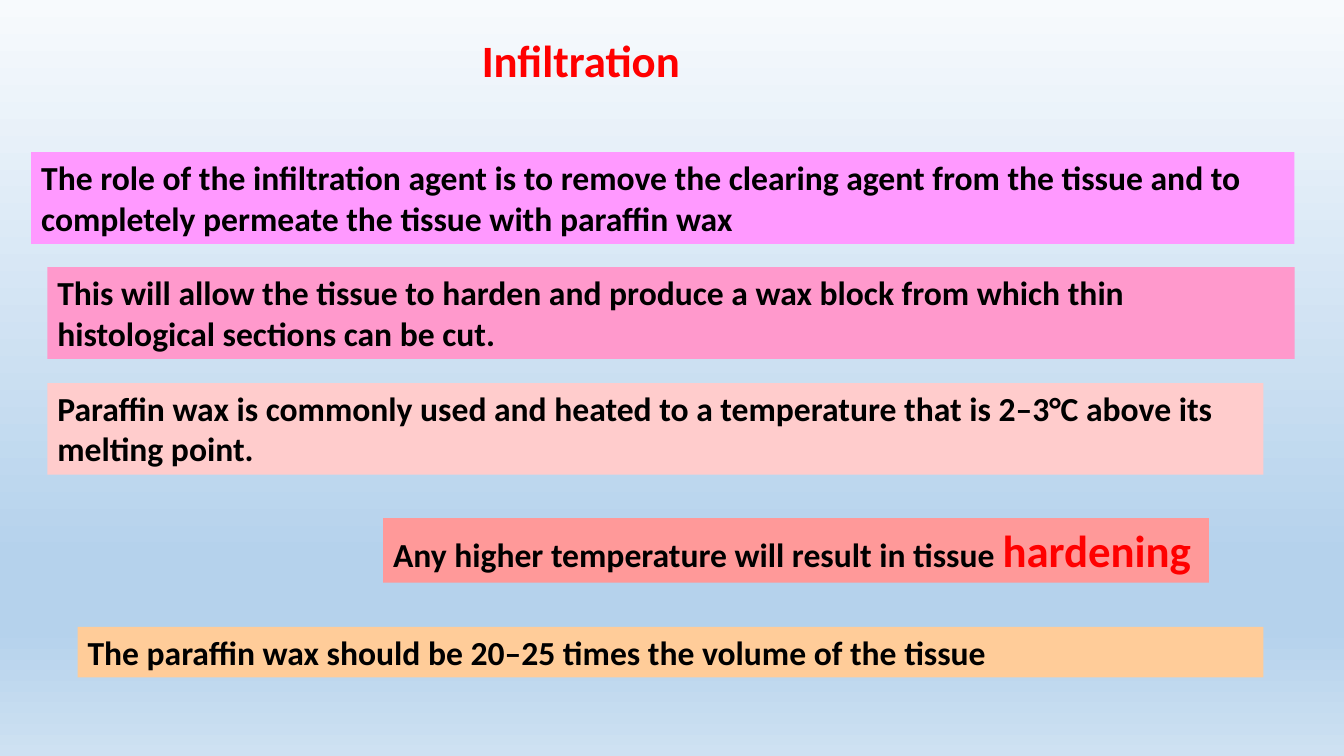
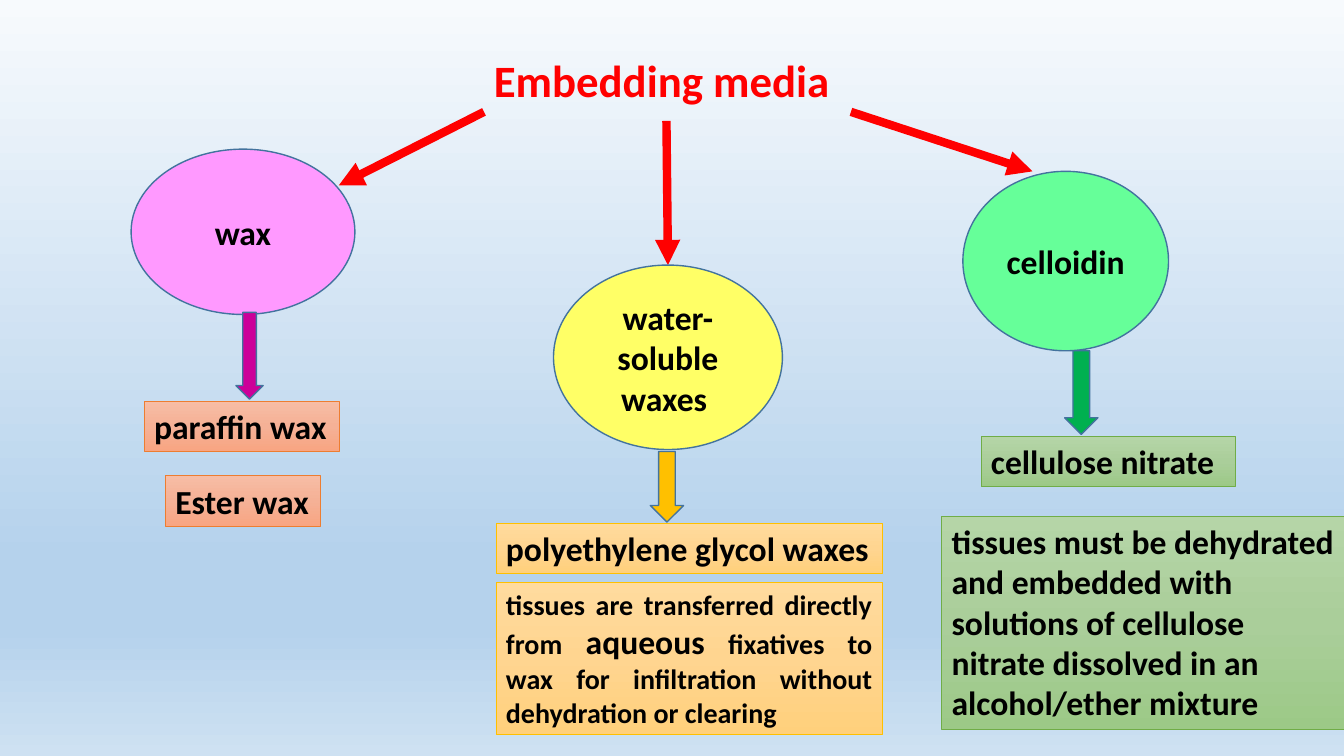
"""Build two slides on wax infiltration and embedding media."""
from lxml import etree
from copy import deepcopy
from pptx import Presentation
from pptx.dml.color import RGBColor
from pptx.enum.shapes import MSO_CONNECTOR, MSO_SHAPE
from pptx.enum.text import MSO_ANCHOR, MSO_AUTO_SIZE, PP_ALIGN
from pptx.oxml.ns import qn
from pptx.util import Inches, Pt

OVAL, DOWN_ARROW = MSO_SHAPE.OVAL, MSO_SHAPE.DOWN_ARROW
STRAIGHT = MSO_CONNECTOR.STRAIGHT
MIDDLE = MSO_ANCHOR.MIDDLE
FIT = MSO_AUTO_SIZE.SHAPE_TO_FIT_TEXT
LEFT, CENTER, JUSTIFY = PP_ALIGN.LEFT, PP_ALIGN.CENTER, PP_ALIGN.JUSTIFY

FONT, BLACK, RED, OUTLINE = "Calibri", "000000", "FF0000", "43739E"
BODY, SMALL, LARGE = 24, 20, 32
BACKGROUND = [(0, "F7FAFD"), (0.74, "B5D2EC"), (0.83, "B5D2EC"), (1, "CEE1F2")]
ORANGE = ([(0, "F7BDA5"), (0.5, "F5B196"), (1, "F8A582")], "ED7D31")
GOLD = ([(0, "FFDB9E"), (0.5, "FFD590"), (1, "FFD07C")], "FFC000")
GREEN = ([(0, "B5D5A7"), (0.5, "AACE9A"), (1, "9CC987")], "70AD47")

INFILTRATION_TITLE = ("Infiltration", (4.68, 0.28, 2.19, 0.64), False)
INFILTRATION_NOTES = [
    ((0.31, 1.51, 12.53, 0.91), "FF99FF", True,
     "The role of the infiltration agent is to remove the clearing agent from "
     "the tissue and to completely permeate the tissue with paraffin wax"),
    ((0.47, 2.65, 12.37, 0.91), "FF99CC", True,
     "This will allow the tissue to harden and produce a wax block from which "
     "thin histological sections can be cut."),
    ((0.47, 3.8, 12.06, 0.91), "FFCCCC", True,
     "Paraffin wax is commonly used and heated to a temperature that is 2–3°C "
     "above its melting point."),
    ((3.8, 5.14, 8.19, 0.64), "FF9999", False,
     [("Any higher temperature will result in tissue ", BODY, BLACK),
      ("hardening", LARGE, RED)]),
    ((0.77, 6.22, 11.76, 0.5), "FFCC99", True,
     "The paraffin wax should be 20–25 times the volume of the tissue"),
]

MEDIA_TITLE = ("Embedding media", (4.8, 0.47, 4.04, 0.64), True)
MEDIA = [
    {"name": "wax", "oval": (1.3, 1.48, 2.22, 1.64), "fill": "FF99FF",
     "line": (4.8, 1.11, 3.36, 1.84), "joined": False,
     "arrow": (2.34, 3.1, 0.27, 0.86), "arrow_fill": "CC0099", "panel": ORANGE,
     "boxes": [((1.43, 3.98, 1.94, 0.5), False, LEFT, "paraffin wax"),
               ((1.64, 4.72, 1.54, 0.5), False, LEFT, "Ester wax")]},
    {"name": "water-soluble waxes ", "oval": (5.49, 2.63, 2.27, 1.83),
     "fill": "FFFF66", "line": (6.61, 1.2, 6.62, 2.63), "joined": True,
     "arrow": (6.45, 4.48, 0.33, 0.7), "arrow_fill": "FFC000", "panel": GOLD,
     "boxes": [((4.92, 5.19, 3.83, 0.5), False, LEFT,
                "polyethylene glycol waxes"),
               ((4.92, 5.78, 3.83, 1.51), True, JUSTIFY,
                [("tissues are transferred directly from ", SMALL, BLACK),
                 ("aqueous", BODY, BLACK),
                 (" fixatives to wax for infiltration without dehydration "
                  "or clearing", SMALL, BLACK)])]},
    {"name": "celloidin", "oval": (9.55, 1.7, 2.04, 1.78), "fill": "66FF99",
     "line": (8.44, 1.11, 10.24, 1.7), "joined": False,
     "arrow": (10.56, 3.48, 0.33, 0.83), "arrow_fill": "00B050", "panel": GREEN,
     "boxes": [((9.73, 4.33, 2.52, 0.5), False, LEFT, "cellulose nitrate"),
               ((9.34, 5.12, 4, 2.12), True, LEFT,
                "tissues must be dehydrated and embedded with solutions of "
                "cellulose nitrate dissolved in an alcohol/ether mixture")]},
]


def rgb(color):
    return RGBColor.from_string(color)


def inches(values):
    return [Inches(v) for v in values]


def set_fill(fill, paint):
    if isinstance(paint, str):
        fill.solid()
        fill.fore_color.rgb = rgb(paint)
        return
    fill.gradient()
    fill.gradient_angle = 270
    first = fill.gradient_stops[0]._gs
    for _ in paint[2:]:
        first.addnext(deepcopy(first))
    for stop, (position, color) in zip(fill.gradient_stops, paint):
        stop.position = position
        stop.color.rgb = rgb(color)


def set_line(sp, color, width):
    sp.line.color.rgb = rgb(color)
    sp.line.width = Pt(width)


def write(tf, text, size=BODY, color=BLACK, align=LEFT, wrap=True):
    tf.word_wrap = wrap
    p = tf.paragraphs[0]
    p.alignment = align
    runs = [(text, size, color)] if isinstance(text, str) else text
    for words, points, ink in runs:
        r = p.add_run()
        r.text = words
        r.font.name, r.font.size, r.font.bold = FONT, Pt(points), True
        r.font.color.rgb = rgb(ink)


def add_box(s, box, text, paint=None, outline=None, **fmt):
    sp = s.shapes.add_textbox(*inches(box))
    if paint:
        set_fill(sp.fill, paint)
    if outline:
        set_line(sp, outline, 0.5)
    write(sp.text_frame, text, **fmt)
    sp.text_frame.auto_size = FIT


def add_shape(s, kind, box, paint):
    sp = s.shapes.add_shape(kind, *inches(box))
    sp.shadow.inherit = False
    set_fill(sp.fill, paint)
    set_line(sp, OUTLINE, 1)
    return sp


def add_arrow(s, ends):
    line = s.shapes.add_connector(STRAIGHT, *inches(ends))
    set_line(line, RED, 6)
    etree.SubElement(line.line._get_or_add_ln(), qn("a:tailEnd"), type="triangle")
    etree.SubElement(line._element.spPr, qn("a:effectLst"))
    return line


def add_slide(prs, title):
    s = prs.slides.add_slide(prs.slide_layouts[6])
    text, box, wrap = title
    add_box(s, box, text, size=LARGE, color=RED, wrap=wrap)
    return s


def add_medium(s, medium):
    line = add_arrow(s, medium["line"])
    oval = add_shape(s, OVAL, medium["oval"], medium["fill"])
    oval.text_frame.vertical_anchor = MIDDLE
    write(oval.text_frame, medium["name"], align=CENTER)
    if medium["joined"]:
        line.end_connect(oval, 0)
    add_shape(s, DOWN_ARROW, medium["arrow"], medium["arrow_fill"])
    paint, outline = medium["panel"]
    for box, wrap, align, text in medium["boxes"]:
        add_box(s, box, text, paint, outline, wrap=wrap, align=align)


def main():
    prs = Presentation()
    prs.slide_width, prs.slide_height = inches((13.33, 7.5))
    set_fill(prs.slide_master.background.fill, BACKGROUND)

    s = add_slide(prs, INFILTRATION_TITLE)
    for box, paint, wrap, text in INFILTRATION_NOTES:
        add_box(s, box, text, paint, wrap=wrap)

    s = add_slide(prs, MEDIA_TITLE)
    for medium in MEDIA:
        add_medium(s, medium)

    prs.save("out.pptx")


if __name__ == "__main__":
    main()
